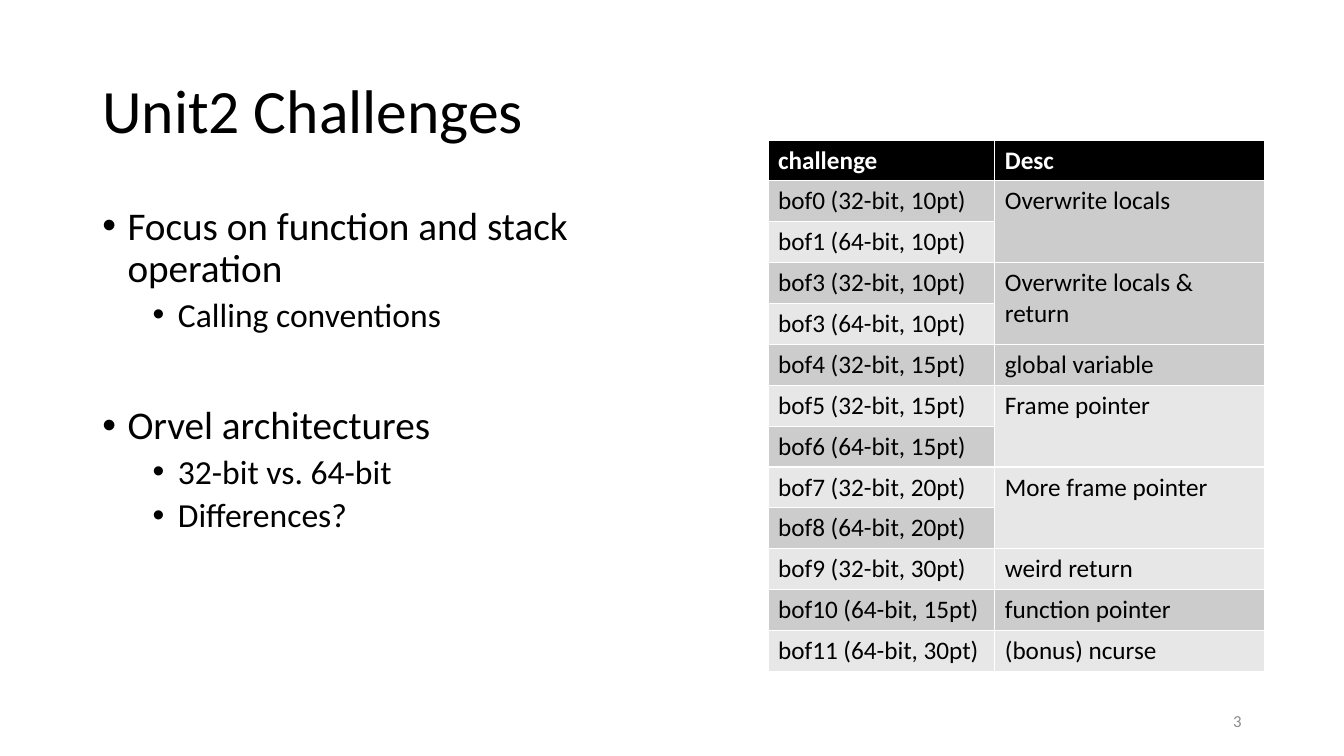
from dataclasses import dataclass

from lxml.etree import SubElement
from pptx import Presentation
from pptx.dml.color import RGBColor as Rgb
from pptx.enum.text import MSO_ANCHOR as Anchor, PP_ALIGN as Align
from pptx.oxml.ns import qn
from pptx.util import Pt

FONT = "Calibri"
COLORS = {
    "text": "000000",
    "header": "000000",
    "header_text": "FFFFFF",
    "odd_row": "CCCCCC",
    "even_row": "E7E7E7",
    "page_number": "8C8C8C",
}


@dataclass(frozen=True)
class Box:
    left: float
    top: float
    width: float
    height: float

    def lengths(self) -> tuple:
        return Pt(self.left), Pt(self.top), Pt(self.width), Pt(self.height)


@dataclass(frozen=True)
class Point:
    text: str
    level: int = 0
    space_before: float = 10


@dataclass(frozen=True)
class Topic:
    desc: str
    challenges: tuple


POINTS = [
    Point("Focus on function and stack operation"),
    Point("Calling conventions", 1, 5),
    Point("Orvel architectures", 0, 51),
    Point("32-bit vs. 64-bit", 1, 5),
    Point("Differences?", 1, 5),
]
TOPICS = [
    Topic("Overwrite locals", ("bof0 (32-bit, 10pt)", "bof1 (64-bit, 10pt)")),
    Topic("Overwrite locals & return", ("bof3 (32-bit, 10pt)", "bof3 (64-bit, 10pt)")),
    Topic("global variable", ("bof4 (32-bit, 15pt)",)),
    Topic("Frame pointer", ("bof5 (32-bit, 15pt)", "bof6 (64-bit, 15pt)")),
    Topic("More frame pointer", ("bof7 (32-bit, 20pt)", "bof8 (64-bit, 20pt)")),
    Topic("weird return", ("bof9 (32-bit, 30pt)",)),
    Topic("function pointer", ("bof10 (64-bit, 15pt)",)),
    Topic("(bonus) ncurse", ("bof11 (64-bit, 30pt)",)),
]
COLUMN_WIDTHS = (162, 193)
ROW_HEIGHT = 29.2


def style(paragraph, size: float, color: str, bold: bool = False) -> None:
    font = paragraph.font
    font.name, font.size, font.bold = FONT, Pt(size), bold
    font.color.rgb = Rgb.from_string(COLORS[color])


def add_frame(slide, box: Box, anchor: Anchor):
    frame = slide.shapes.add_textbox(*box.lengths()).text_frame
    frame.word_wrap = True
    frame.vertical_anchor = anchor
    return frame


def add_line(slide, box: Box, text: str, size: float, color: str, align: Align) -> None:
    line = add_frame(slide, box, Anchor.MIDDLE).paragraphs[0]
    line.text = text
    line.alignment = align
    line.line_spacing = 0.9 if size > 40 else 1.0
    style(line, size, color)


def add_points(slide, box: Box, points: list) -> None:
    frame = add_frame(slide, box, Anchor.TOP)
    for index, point in enumerate(points):
        paragraph = frame.add_paragraph() if index else frame.paragraphs[0]
        paragraph.text = point.text
        paragraph.level = point.level
        paragraph.line_spacing = 0.9
        paragraph.space_before = Pt(point.space_before)
        style(paragraph, 28 - 4 * point.level, "text")
        properties = paragraph._p.get_or_add_pPr()
        properties.set("marL", str(Pt(18 + 36 * point.level)))
        properties.set("indent", str(Pt(-18)))
        bullet_font = SubElement(properties, qn("a:buFont"))
        bullet_font.set("typeface", "Arial")
        SubElement(properties, qn("a:buChar")).set("char", "•")
        properties.append(properties.find(qn("a:defRPr")))


def fill_cell(cell, text: str, fill: str, color: str = "text", bold: bool = False) -> None:
    cell.fill.solid()
    cell.fill.fore_color.rgb = Rgb.from_string(COLORS[fill])
    cell.text = text
    style(cell.text_frame.paragraphs[0], 18, color, bold)


def add_challenges(slide, left: float, top: float, topics: list) -> None:
    row_count = 1 + sum(len(topic.challenges) for topic in topics)
    box = Box(left, top, sum(COLUMN_WIDTHS), ROW_HEIGHT * row_count)
    table = slide.shapes.add_table(row_count, len(COLUMN_WIDTHS), *box.lengths()).table
    for column, width in zip(table.columns, COLUMN_WIDTHS):
        column.width = Pt(width)
    for row in table.rows:
        row.height = Pt(ROW_HEIGHT)
    for column, heading in enumerate(("challenge", "Desc")):
        fill_cell(table.cell(0, column), heading, "header", "header_text", True)
    first = 1
    for topic in topics:
        last = first + len(topic.challenges) - 1
        for row, challenge in enumerate(topic.challenges, first):
            band = "odd_row" if row % 2 else "even_row"
            fill_cell(table.cell(row, 0), challenge, band)
        desc = table.cell(first, 1)
        fill_cell(desc, topic.desc, "odd_row" if first % 2 else "even_row")
        if last > first:
            desc.merge(table.cell(last, 1))
        first = last + 1


def main() -> None:
    deck = Presentation()
    deck.slide_width, deck.slide_height = Pt(960), Pt(540)
    slide = deck.slides.add_slide(deck.slide_layouts[6])
    add_line(slide, Box(66, 28.8, 828, 104.4), "Unit2 Challenges", 44, "text", Align.LEFT)
    add_points(slide, Box(66, 144, 408, 342.7), POINTS)
    add_challenges(slide, 548.6, 100, TOPICS)
    add_line(slide, Box(678, 500.5, 216, 28.8), "3", 12, "page_number", Align.RIGHT)
    deck.save("out.pptx")


if __name__ == "__main__":
    main()
